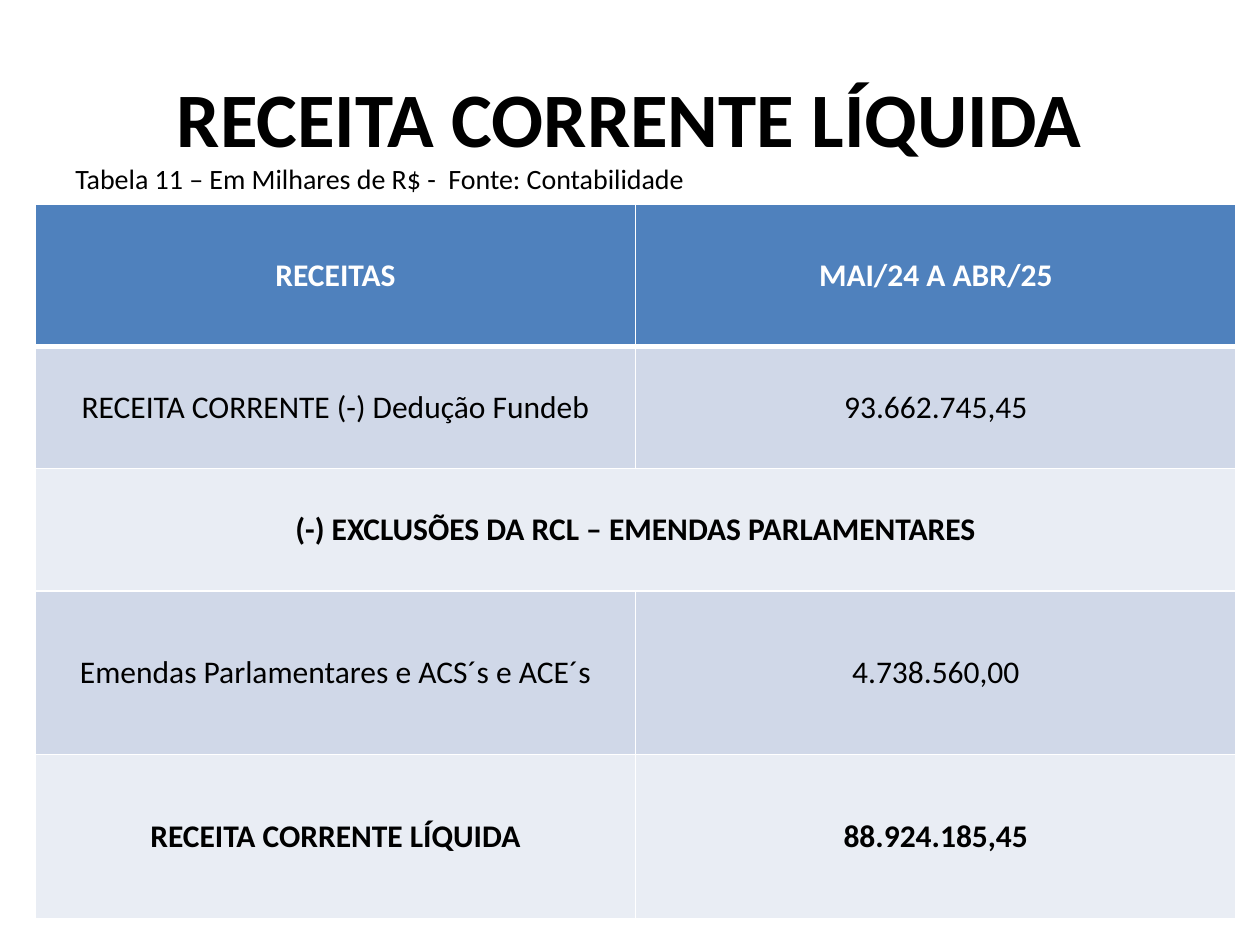
from lxml import etree
from pptx import Presentation
from pptx import util as u
from pptx.dml import color
from pptx.enum import text
from pptx.oxml import ns

THEME = {
    "font": "Calibri", "ink": "000000", "paper": "FFFFFF", "header": "4F81BD",
    "bands": ("D0D8E8", "E9EDF4"),
    "title_size": 44, "caption_size": 16, "table_size": 18,
    "rule": 1, "header_rule": 3,
}
TITLE = "RECEITA CORRENTE LÍQUIDA"
CAPTION = "Tabela 11 – Em Milhares de R$ -  Fonte: Contabilidade"
REVENUES = [
    (("RECEITAS", "MAI/24 A ABR/25"), True, 1.13),
    (("RECEITA CORRENTE (-) Dedução Fundeb", "93.662.745,45"), False, 0.97),
    (("(-) EXCLUSÕES DA RCL – EMENDAS PARLAMENTARES",), True, 0.97),
    (("Emendas Parlamentares e ACS´s e ACE´s", "4.738.560,00"), False, 1.3),
    (("RECEITA CORRENTE LÍQUIDA", "88.924.185,45"), True, 1.3),
]
WIDTH, HEIGHT = 10, 7.5
COLUMNS = 2
MARGIN = WIDTH * 0.05
TABLE_LEFT, TABLE_TOP, TABLE_WIDTH = 0.28, 1.62, 9.53


def write(paragraph, words, size, ink, bold=False):
    run = paragraph.add_run()
    run.text = words
    run.font.name = THEME["font"]
    run.font.size = u.Pt(size)
    run.font.bold = bold
    run.font.color.rgb = color.RGBColor.from_string(ink)


def add_words(slide, top, height, words, size, anchor, align, bold=False):
    frame = slide.shapes.add_textbox(
        u.Inches(MARGIN), u.Inches(top), u.Inches(WIDTH - 2 * MARGIN), u.Inches(height)
    ).text_frame
    frame.word_wrap = True
    frame.vertical_anchor = anchor
    paragraph = frame.paragraphs[0]
    paragraph.alignment = align
    write(paragraph, words, size, THEME["ink"], bold)
    return paragraph


def add_borders(cell, top, bottom):
    properties = cell._tc.get_or_add_tcPr()
    sides = {"lnL": THEME["rule"], "lnR": THEME["rule"], "lnT": top, "lnB": bottom}
    for side, points in sides.items():
        line = etree.SubElement(properties, ns.qn(f"a:{side}"), w=str(u.Pt(points)))
        fill = etree.SubElement(line, ns.qn("a:solidFill"))
        etree.SubElement(fill, ns.qn("a:srgbClr"), val=THEME["paper"])


def add_revenues(slide):
    heights = [height for _, _, height in REVENUES]
    table = slide.shapes.add_table(
        len(REVENUES), COLUMNS, u.Inches(TABLE_LEFT), u.Inches(TABLE_TOP),
        u.Inches(TABLE_WIDTH), u.Inches(sum(heights)),
    ).table
    for row, (labels, bold, height) in enumerate(REVENUES):
        table.rows[row].height = u.Inches(height)
        if len(labels) < COLUMNS:
            table.cell(row, 0).merge(table.cell(row, COLUMNS - 1))
        background = THEME["bands"][(row - 1) % 2] if row else THEME["header"]
        top = THEME["header_rule"] if row == 1 else THEME["rule"]
        bottom = THEME["rule"] if row else THEME["header_rule"]
        for cell in table.rows[row].cells:
            add_borders(cell, top, bottom)
            cell.fill.solid()
            cell.fill.fore_color.rgb = color.RGBColor.from_string(background)
            cell.vertical_anchor = text.MSO_ANCHOR.MIDDLE
        for column, label in enumerate(labels):
            paragraph = table.cell(row, column).text_frame.paragraphs[0]
            paragraph.alignment = text.PP_ALIGN.CENTER
            ink = THEME["ink"] if row else THEME["paper"]
            write(paragraph, label, THEME["table_size"], ink, bold)


def main():
    deck = Presentation()
    deck.slide_width, deck.slide_height = u.Inches(WIDTH), u.Inches(HEIGHT)
    slide = deck.slides.add_slide(deck.slide_layouts[6])
    add_words(slide, 0.3, 1.25, TITLE, THEME["title_size"],
              text.MSO_ANCHOR.MIDDLE, text.PP_ALIGN.CENTER, True)
    caption = add_words(slide, 1.23, 5.47, CAPTION, THEME["caption_size"],
                        text.MSO_ANCHOR.TOP, text.PP_ALIGN.LEFT)
    caption.space_before = u.Pt(THEME["caption_size"] * 0.2)
    add_revenues(slide)
    deck.save("out.pptx")


if __name__ == "__main__":
    main()
